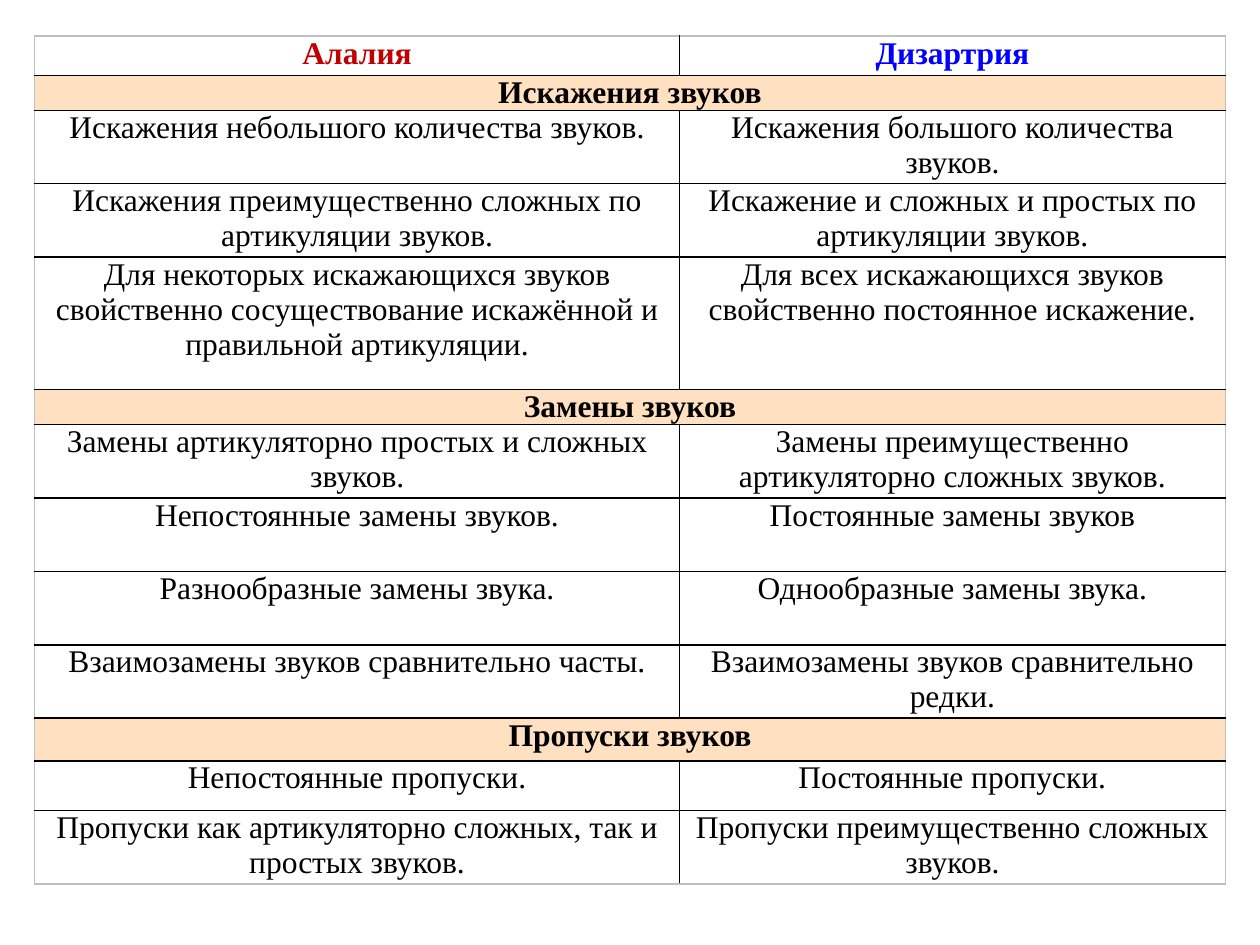
"""Build a slide with a table comparing speech sounds in alalia and dysarthria."""
from lxml.etree import SubElement
from pptx import Presentation
from pptx.dml.color import RGBColor
from pptx.enum.text import MSO_ANCHOR, PP_ALIGN
from pptx.oxml.ns import qn
from pptx.util import Cm, Pt

COLORS = {"alalia": "C00000", "dysarthria": "0000FF", "text": "000000",
          "band": "FFE0C1", "grid": "000000", "edge": "BFBFBF"}
HEADS = ("Алалия", "Дизартрия")
SECTIONS = [
    ("Искажения звуков", [
        ("Искажения небольшого количества звуков.",
         "Искажения большого количества звуков."),
        ("Искажения преимущественно сложных по артикуляции звуков.",
         "Искажение и сложных и простых по артикуляции звуков."),
        ("Для некоторых искажающихся звуков свойственно сосуществование "
         "искажённой и правильной артикуляции.",
         "Для всех искажающихся звуков свойственно постоянное искажение."),
    ]),
    ("Замены звуков", [
        ("Замены артикуляторно простых и сложных звуков.",
         "Замены преимущественно артикуляторно сложных звуков."),
        ("Непостоянные замены звуков.", "Постоянные замены звуков"),
        ("Разнообразные замены звука.", "Однообразные замены звука."),
        ("Взаимозамены звуков сравнительно часты.",
         "Взаимозамены звуков сравнительно редки."),
    ]),
    ("Пропуски звуков", [
        ("Непостоянные пропуски.", "Постоянные пропуски."),
        ("Пропуски как артикуляторно сложных, так и простых звуков.",
         "Пропуски преимущественно сложных звуков."),
    ]),
]
LEFT, TOP = 0.7, 0.73
WIDTHS = (13, 11)
ROW_H = 1.48
SPECIAL_H = {0: 0.79, 1: 0.7, 4: 2.67, 5: 0.7, 10: 0.86, 11: 1}
CELL = {"margin_left": Cm(0.16), "margin_right": Cm(0.16), "margin_top": 0,
        "margin_bottom": 0, "vertical_anchor": MSO_ANCHOR.TOP}
FONT = {"name": "Times New Roman", "size": Pt(18)}


def apply(obj, fmt):
    for key, value in fmt.items():
        setattr(obj, key, value)


def add_border(cell, side, color):
    ln = SubElement(cell._tc.get_or_add_tcPr(), qn(f"a:ln{side}"), w=str(Pt(1)))
    fill = SubElement(ln, qn("a:solidFill"))
    SubElement(fill, qn("a:srgbClr"), val=COLORS[color])


def write(cell, text, color, bold):
    p = cell.text_frame.paragraphs[0]
    p.alignment = PP_ALIGN.CENTER
    r = p.add_run()
    r.text = text
    apply(r.font, {**FONT, "bold": bold})
    r.font.color.rgb = RGBColor.from_string(COLORS[color])


def main():
    prs = Presentation()
    apply(prs, {"slide_width": Cm(25.4), "slide_height": Cm(19.05)})
    s = prs.slides.add_slide(prs.slide_layouts[6])
    rows = [HEADS]
    for title, pairs in SECTIONS:
        rows += [(title,), *pairs]
    heights = [SPECIAL_H.get(i, ROW_H) for i in range(len(rows))]
    tbl = s.shapes.add_table(len(rows), len(WIDTHS), Cm(LEFT), Cm(TOP),
                             Cm(sum(WIDTHS)), Cm(sum(heights))).table
    apply(tbl, {"first_row": False, "horz_banding": False})
    for col, width in zip(tbl.columns, WIDTHS):
        col.width = Cm(width)

    last = len(rows) - 1
    for i, texts in enumerate(rows):
        tbl.rows[i].height = Cm(heights[i])
        band = len(texts) == 1
        if band:
            tbl.cell(i, 0).merge(tbl.cell(i, 1))
        for j in range(len(WIDTHS)):
            cell = tbl.cell(i, j)
            apply(cell, CELL)
            outer = {"L": band or j == 0, "R": band or j == 1,
                     "T": i == 0, "B": i == last}
            for side, is_edge in outer.items():
                add_border(cell, side, "edge" if is_edge else "grid")
            if band:
                cell.fill.solid()
                cell.fill.fore_color.rgb = RGBColor.from_string(COLORS["band"])
            else:
                cell.fill.background()
        for j, text in enumerate(texts):
            color = ("alalia", "dysarthria")[j] if i == 0 else "text"
            write(tbl.cell(i, j), text, color, band or i == 0)
    prs.save("out.pptx")


if __name__ == "__main__":
    main()
